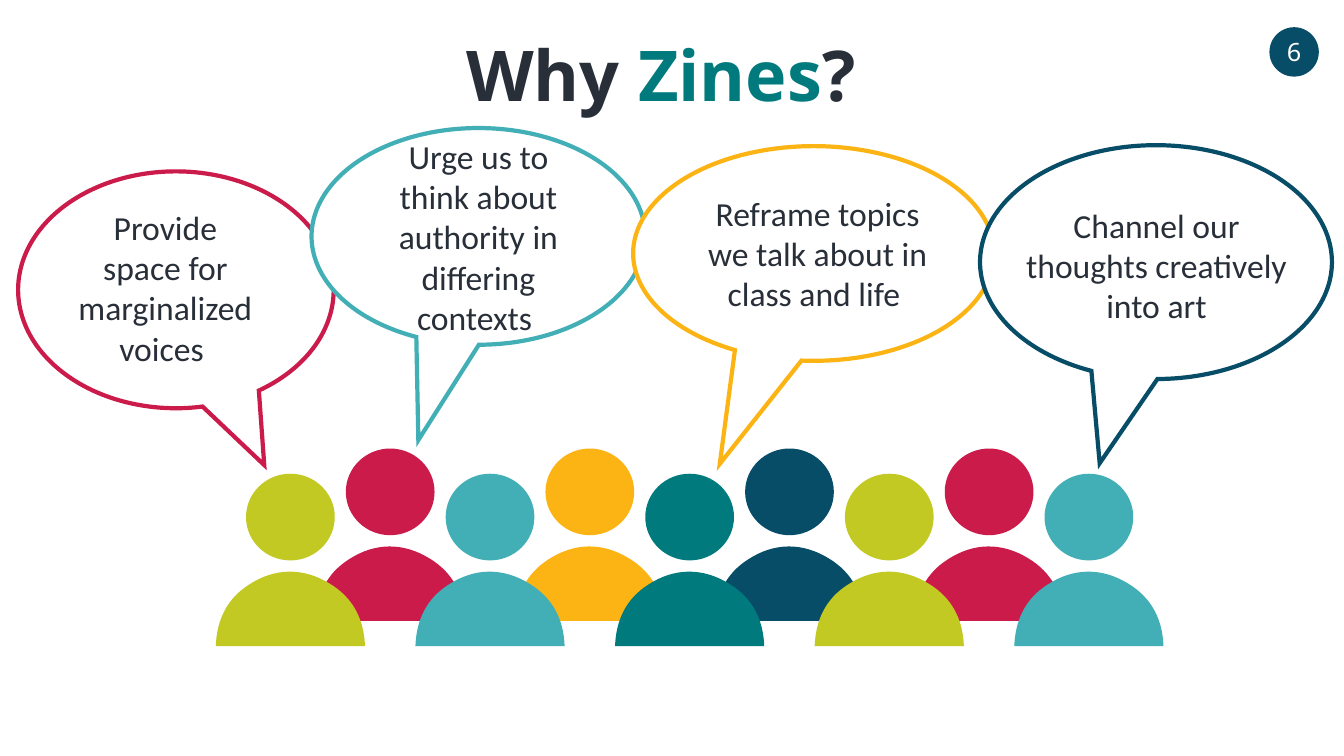
from dataclasses import dataclass

from lxml import etree
from pptx import Presentation
from pptx import util as u
from pptx.dml.color import RGBColor
from pptx.enum import shapes, text
from pptx.oxml import ns

NAVY = RGBColor(0x07, 0x4D, 0x67)
TEAL = RGBColor(0x00, 0x7A, 0x7D)
AQUA = RGBColor(0x42, 0xAF, 0xB6)
AMBER = RGBColor(0xFC, 0xB4, 0x14)
CRIMSON = RGBColor(0xCB, 0x1B, 0x4A)
LIME = RGBColor(0xC2, 0xC9, 0x23)
INK = RGBColor(0x28, 0x2F, 0x39)
WHITE = RGBColor(0xFF, 0xFF, 0xFF)

PX = 9144
HEADING_FONT = "Noto Sans"
BODY_FONT = "Calibri"
PERSON_STEP = 198
BODY = [
    (0, 78),
    (1, 52), (11, 31), (33, 17),
    (59, 0), (87, 0), (113, 16),
    (136, 30), (147, 51), (148, 78),
    (99, 78), (49, 78), (0, 78),
]
HEAD = [
    (44, 86),
    (20, 86), (0, 67), (0, 43),
    (0, 19), (20, 0), (44, 0),
    (68, 0), (88, 19), (88, 43),
    (88, 67), (68, 86), (44, 86),
]


@dataclass(frozen=True)
class Area:
    left: int
    top: int
    width: int
    height: int

    def emu(self) -> tuple[int, ...]:
        return tuple(value * PX for value in (self.left, self.top, self.width, self.height))


@dataclass(frozen=True)
class Span:
    words: str
    colour: RGBColor = INK


@dataclass(frozen=True)
class Bubble:
    area: Area
    tip: tuple[float, float]
    colour: RGBColor
    words: str = ""


@dataclass(frozen=True)
class Caption:
    area: Area
    words: str


@dataclass(frozen=True)
class Row:
    left: int
    top: int
    colours: tuple[RGBColor, ...]


ROWS = [
    Row(313, 445, (CRIMSON, AMBER, NAVY, CRIMSON)),
    Row(214, 470, (LIME, AQUA, TEAL, LIME, AQUA)),
]
BUBBLES = [
    Bubble(Area(18, 170, 313, 235), (0.28, 0.74), CRIMSON),
    Bubble(Area(309, 127, 331, 215), (-0.18, 0.94), AQUA,
           "Urge us to think about authority in differing contexts "),
    Bubble(Area(628, 145, 358, 213), (-0.26, 0.98), AMBER),
    Bubble(Area(972, 144, 349, 232), (-0.16, 0.86), NAVY),
]
CAPTIONS = [
    Caption(Area(678, 186, 266, 131), "Reframe topics we talk about in class and life "),
    Caption(Area(65, 200, 198, 172), "Provide space for marginalized voices "),
    Caption(Area(1006, 198, 282, 131), "Channel our thoughts creatively into art"),
]
TITLE = [Span("Why "), Span("Zines", TEAL), Span("?")]


def write(shape, spans: list[Span], size: int, font: str, bold: bool = False) -> None:
    para = shape.text_frame.paragraphs[0]
    para.alignment = text.PP_ALIGN.CENTER
    for span in spans:
        run = para.add_run()
        run.text = span.words
        run.font.size = u.Pt(size)
        run.font.name = font
        run.font.bold = bold
        run.font.color.rgb = span.colour


def paint(shape, colour: RGBColor) -> None:
    shape.shadow.inherit = False
    shape.fill.solid()
    shape.fill.fore_color.rgb = colour
    shape.line.fill.background()


def add_text(page, area: Area, spans: list[Span], size: int, font: str, bold: bool = False) -> None:
    box = page.shapes.add_textbox(*area.emu())
    box.text_frame.word_wrap = True
    box.text_frame.auto_size = text.MSO_AUTO_SIZE.SHAPE_TO_FIT_TEXT
    write(box, spans, size, font, bold)


def add_badge(page, area: Area, number: str) -> None:
    badge = page.shapes.add_shape(shapes.MSO_SHAPE.OVAL, *area.emu())
    paint(badge, NAVY)
    badge.text_frame.word_wrap = False
    badge.text_frame.vertical_anchor = text.MSO_ANCHOR.MIDDLE
    write(badge, [Span(number, WHITE)], 18, HEADING_FONT)


def add_curved(page, left: int, top: int, outline: list[tuple[int, int]], colour: RGBColor) -> None:
    points = [((left + x) * PX, (top + y) * PX) for x, y in outline]
    builder = page.shapes.build_freeform(*points[0])
    builder.add_line_segments(points[1:], close=True)
    figure = builder.convert_to_shape()
    paint(figure, colour)
    segments = figure.element.xpath(".//a:lnTo")
    for start in range(0, len(segments), 3):
        curve = etree.Element(ns.qn("a:cubicBezTo"))
        segments[start].addprevious(curve)
        for segment in segments[start:start + 3]:
            curve.append(segment[0])
            segment.getparent().remove(segment)


def add_person(page, left: int, top: int, colour: RGBColor) -> None:
    add_curved(page, left, top + 93, BODY, colour)
    add_curved(page, left + 30, top, HEAD, colour)


def add_bubble(page, bubble: Bubble) -> None:
    callout = page.shapes.add_shape(shapes.MSO_SHAPE.OVAL_CALLOUT, *bubble.area.emu())
    paint(callout, WHITE)
    callout.line.color.rgb = bubble.colour
    callout.line.width = u.Pt(3)
    outline = callout.element.xpath("./p:spPr/a:ln")[0]
    etree.SubElement(outline, ns.qn("a:miter"), lim="800000")
    callout.adjustments[0], callout.adjustments[1] = bubble.tip
    if bubble.words:
        callout.text_frame.vertical_anchor = text.MSO_ANCHOR.MIDDLE
        write(callout, [Span(bubble.words)], 24, BODY_FONT)


def main() -> None:
    deck = Presentation()
    deck.slide_width, deck.slide_height = 1333 * PX, 750 * PX
    page = deck.slides.add_slide(deck.slide_layouts[6])

    add_badge(page, Area(1259, 27, 49, 49), "6")
    add_text(page, Area(79, 26, 1153, 94), TITLE, 50, HEADING_FONT, bold=True)

    for row in ROWS:
        for index, colour in enumerate(row.colours):
            add_person(page, row.left + index * PERSON_STEP, row.top, colour)
    for bubble in BUBBLES:
        add_bubble(page, bubble)
    for caption in CAPTIONS:
        add_text(page, caption.area, [Span(caption.words)], 24, BODY_FONT)

    deck.save("out.pptx")


if __name__ == "__main__":
    main()
